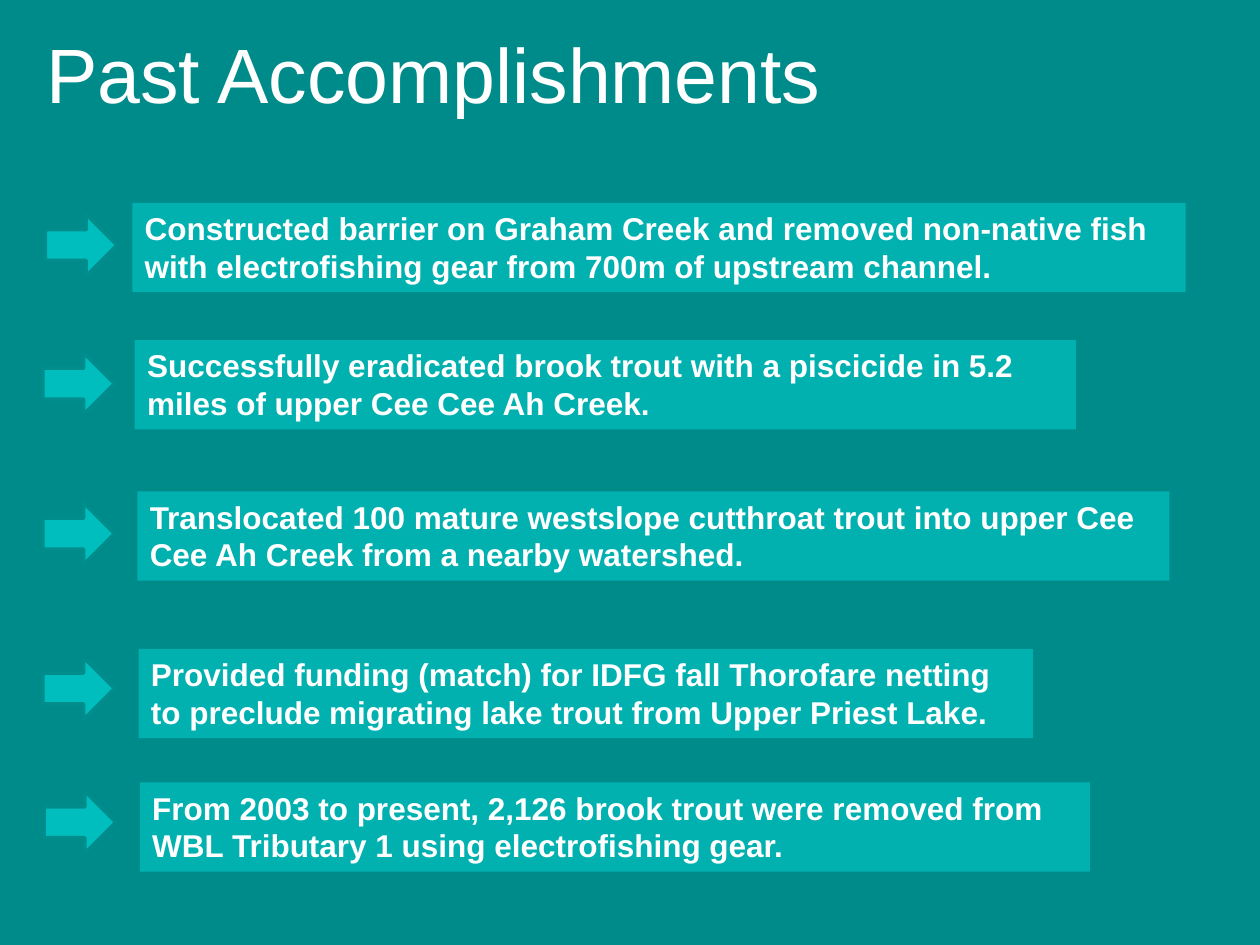
from lxml import etree
from pptx import Presentation
from pptx.dml.color import RGBColor
from pptx.enum.shapes import MSO_SHAPE
from pptx.enum.text import MSO_ANCHOR, MSO_AUTO_SIZE, PP_ALIGN
from pptx.oxml.ns import qn
from pptx.util import Pt

RECT, ARROW = MSO_SHAPE.RECTANGLE, MSO_SHAPE.RIGHT_ARROW
TOP, MIDDLE = MSO_ANCHOR.TOP, MSO_ANCHOR.MIDDLE
GROW, LEFT = MSO_AUTO_SIZE.SHAPE_TO_FIT_TEXT, PP_ALIGN.LEFT

COLORS = {"back": "008B8B", "aqua": "00BEBD", "edge": "008D8C", "text": "FFFFFF"}
TITLE = {"name": "Arial", "size": Pt(44), "bold": False}
BODY = {"name": "Arial", "size": Pt(18), "bold": True}

ITEMS = [
    (75.6, 115.9, 601.9, 25.9, 122.4,
     "Constructed barrier on Graham Creek and removed non-native fish "
     "with electrofishing gear from 700m of upstream channel."),
    (77, 194.4, 537.8, 24.5, 201.6,
     "Successfully eradicated brook trout with a piscicide in 5.2 "
     "miles of upper Cee Cee Ah Creek."),
    (78.5, 280.8, 589.7, 24.5, 287.3,
     "Translocated 100 mature westslope cutthroat trout into upper Cee "
     "Cee Ah Creek from a nearby watershed."),
    (79.2, 370.8, 511.2, 24.5, 375.8,
     "Provided funding (match) for IDFG fall Thorofare netting "
     "to preclude migrating lake trout from Upper Priest Lake."),
    (79.9, 447.1, 542.9, 25.2, 452.2,
     "From 2003 to present, 2,126 brook trout were removed from "
     "WBL Tributary 1 using electrofishing gear."),
]


class Deck:
    """Hold the style and the current slide."""

    def __init__(self, slide, colors):
        self.slide = slide
        self.colors = {key: RGBColor.from_string(code) for key, code in colors.items()}

    def paint(self, fill, key):
        """Fill with one plain colour."""
        fill.solid()
        fill.fore_color.rgb = self.colors[key]

    def label(self, shape, text, style, anchor):
        """Set the text of a shape in the given style."""
        frame = shape.text_frame
        frame.word_wrap = True
        frame.vertical_anchor = anchor
        para = frame.paragraphs[0]
        para.alignment = LEFT
        run = para.add_run()
        run.text = text
        for key, value in style.items():
            setattr(run.font, key, value)
        run.font.color.rgb = self.colors["text"]

    def title(self, text, *area):
        """Add the heading."""
        box = self.slide.shapes.add_textbox(*map(Pt, area))
        self.label(box, text, TITLE, MIDDLE)

    def shape(self, kind, *area):
        """Add a flat aqua shape."""
        shape = self.slide.shapes.add_shape(kind, *map(Pt, area))
        shape.shadow.inherit = False
        self.paint(shape.fill, "aqua")
        return shape

    def box(self, text, *area):
        """Add a see-through text panel."""
        shape = self.shape(RECT, *area)
        shape.line.fill.background()
        tint = shape.element.spPr.find(qn("a:solidFill"))[0]
        etree.SubElement(tint, qn("a:alpha"), val="75000")
        self.label(shape, text, BODY, TOP)
        shape.text_frame.auto_size = GROW

    def arrow(self, *area):
        """Add an outlined arrow."""
        shape = self.shape(ARROW, *area)
        self.paint(shape.line.fill, "edge")
        shape.line.width = Pt(2)


def main():
    """Build the slide and save it."""
    show = Presentation()
    show.slide_width, show.slide_height = Pt(720), Pt(540)
    deck = Deck(show.slides.add_slide(show.slide_layouts[6]), COLORS)
    deck.paint(deck.slide.background.fill, "back")
    deck.title("Past Accomplishments", 19.4, 9.4, 648, 64)
    for left, top, width, tail, peak, text in ITEMS:
        deck.box(text, left, top, width, 51)
        deck.arrow(tail, peak, 41, 35.3)
    show.save("out.pptx")


if __name__ == "__main__":
    main()
